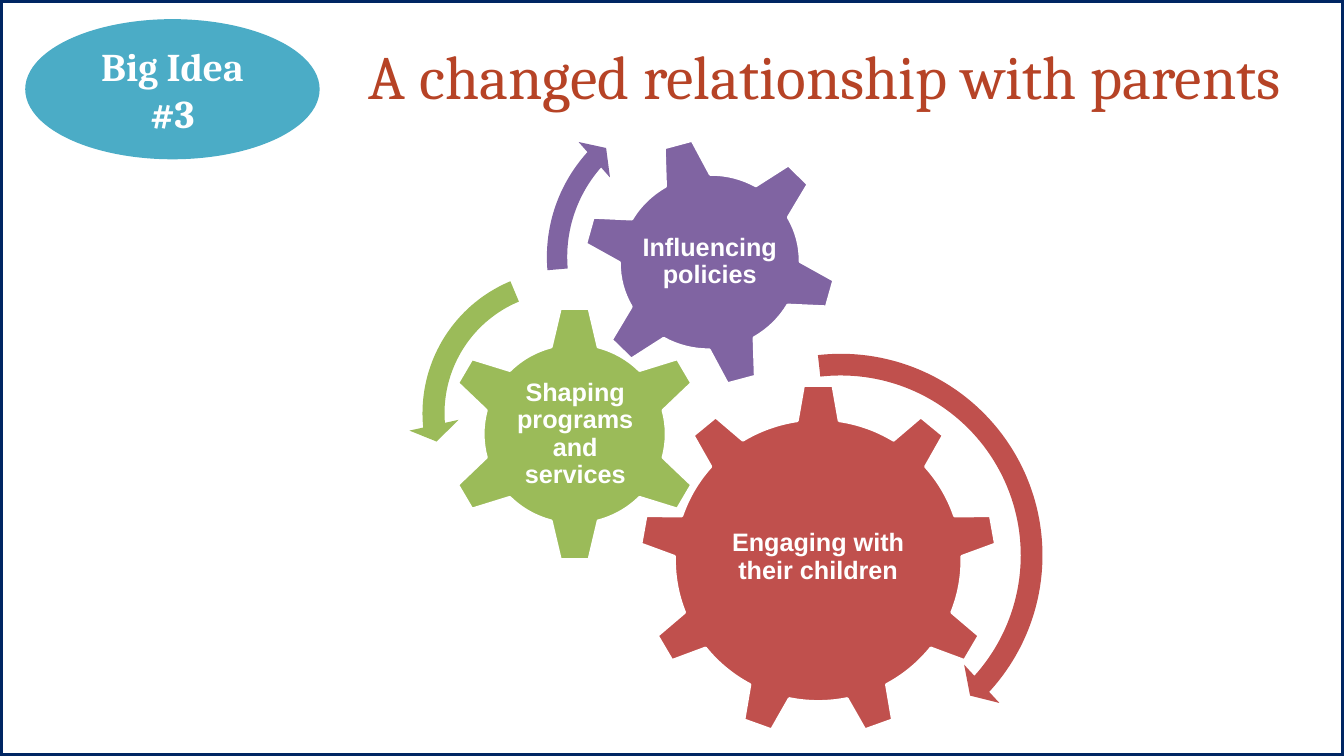
from dataclasses import dataclass
from typing import Any

from pptx import Presentation
from pptx import util as u
from pptx.dml.color import RGBColor
from pptx.enum import shapes, text


@dataclass(frozen=True)
class Theme:
    navy: str = "002663"
    rust: str = "B64326"
    white: str = "FFFFFF"
    red: str = "C0504D"
    green: str = "9BBB59"
    purple: str = "8064A2"
    teal: str = "4BACC6"
    heading_font: str = "Cambria"
    label_font: str = "Arial"
    title_size: int = 44
    badge_size: int = 28
    label_size: int = 18
    border_width: float = 4.5
    gear_outline: float = 2


Place = tuple[float, float, float, float]
Kind = shapes.MSO_SHAPE
THEME = Theme()


@dataclass(frozen=True)
class Gear:
    label: str
    color: str
    kind: Kind
    place: Place
    label_place: Place
    rotation: float = 0


@dataclass(frozen=True)
class TurnArrow:
    color: str
    kind: Kind
    place: Place
    adjustments: tuple[float, ...]


GEARS = [
    Gear("Engaging with their children", THEME.red, Kind.GEAR_9,
         (6.34, 3.81, 3.55, 3.5), (7.05, 4.63, 2.13, 1.8)),
    Gear("Shaping programs and services", THEME.green, Kind.GEAR_6,
         (4.41, 3.03, 2.58, 2.55), (5.06, 3.68, 1.29, 1.26)),
    Gear("Influencing policies", THEME.purple, Kind.GEAR_6,
         (5.77, 1.36, 2.54, 2.48), (6.33, 1.9, 1.42, 1.4), 345),
]

TURN_ARROWS = [
    TurnArrow(THEME.red, Kind.CIRCULAR_ARROW, (6.19, 3.36, 4.3, 4.3),
              (0.05, 2.99, 25.42, 158.08, 0.06)),
    TurnArrow(THEME.green, Kind.LEFT_CIRCULAR_ARROW, (4.05, 2.54, 3.12, 3.12),
              (0.07, 4.3, 104.89, 148.38, 0.08)),
    TurnArrow(THEME.purple, Kind.CIRCULAR_ARROW, (5.29, 0.87, 3.36, 3.36),
              (0.06, 3.94, 133.14, 105.08, 0.07)),
]


def apply(target: Any, values: dict[str, Any]) -> None:
    for name, value in values.items():
        setattr(target, name, value)


def inches(place: Place) -> list[u.Length]:
    return [u.Inches(length) for length in place]


def add_figure(parent: Any, kind: Kind, place: Place, fill: str | None = None,
               outline: str | None = None, width: float = 0) -> Any:
    figure = parent.add_shape(kind, *inches(place))
    figure.shadow.inherit = False
    if fill:
        figure.fill.solid()
        figure.fill.fore_color.rgb = RGBColor.from_string(fill)
    else:
        figure.fill.background()
    if outline:
        figure.line.color.rgb = RGBColor.from_string(outline)
        figure.line.width = u.Pt(width)
    else:
        figure.line.fill.background()
    return figure


def write(box: Any, words: str, font: str, size: int, color: str,
          bold: bool = False, spacing: float = 1, inset: float | None = None) -> None:
    frame = box.text_frame
    apply(frame, {"word_wrap": True, "auto_size": text.MSO_AUTO_SIZE.NONE,
                  "vertical_anchor": text.MSO_ANCHOR.MIDDLE})
    if inset is not None:
        sides = ("left", "top", "right", "bottom")
        apply(frame, {f"margin_{side}": u.Inches(inset) for side in sides})
    para = frame.paragraphs[0]
    apply(para, {"alignment": text.PP_ALIGN.CENTER, "line_spacing": spacing})
    span = para.add_run()
    span.text = words
    apply(span.font, {"name": font, "size": u.Pt(size), "bold": bold})
    span.font.color.rgb = RGBColor.from_string(color)


def draw_gear(parent: Any, gear: Gear) -> None:
    wheel = add_figure(parent, gear.kind, gear.place, gear.color,
                       THEME.white, THEME.gear_outline)
    wheel.rotation = gear.rotation
    label = parent.add_textbox(*inches(gear.label_place))
    write(label, gear.label, THEME.label_font, THEME.label_size, THEME.white,
          bold=True, spacing=0.9, inset=0.03)


def draw_arrow(parent: Any, arrow: TurnArrow) -> None:
    figure = add_figure(parent, arrow.kind, arrow.place, arrow.color)
    for index, value in enumerate(arrow.adjustments):
        figure.adjustments[index] = value


def main() -> None:
    deck = Presentation()
    apply(deck, {"slide_width": u.Inches(13.33), "slide_height": u.Inches(7.5)})
    page = deck.slides.add_slide(deck.slide_layouts.get_by_name("Title Only"))

    add_figure(page.shapes, Kind.RECTANGLE, (0, 0, 13.33, 7.5),
               outline=THEME.navy, width=THEME.border_width)

    title = page.shapes.title
    sides = ("left", "top", "width", "height")
    apply(title, dict(zip(sides, inches((3.18, 0.12, 10.01, 1.25)))))
    write(title, "A changed relationship with parents",
          THEME.heading_font, THEME.title_size, THEME.rust)

    gearing = page.shapes.add_group_shape().shapes
    for gear in GEARS:
        draw_gear(gearing, gear)
    for arrow in TURN_ARROWS:
        draw_arrow(gearing, arrow)

    badge = add_figure(page.shapes, Kind.OVAL, (0.25, 0.19, 2.92, 1.39), THEME.teal)
    write(badge, "Big Idea #3", THEME.heading_font, THEME.badge_size,
          THEME.white, bold=True)

    deck.save("out.pptx")


if __name__ == "__main__":
    main()
